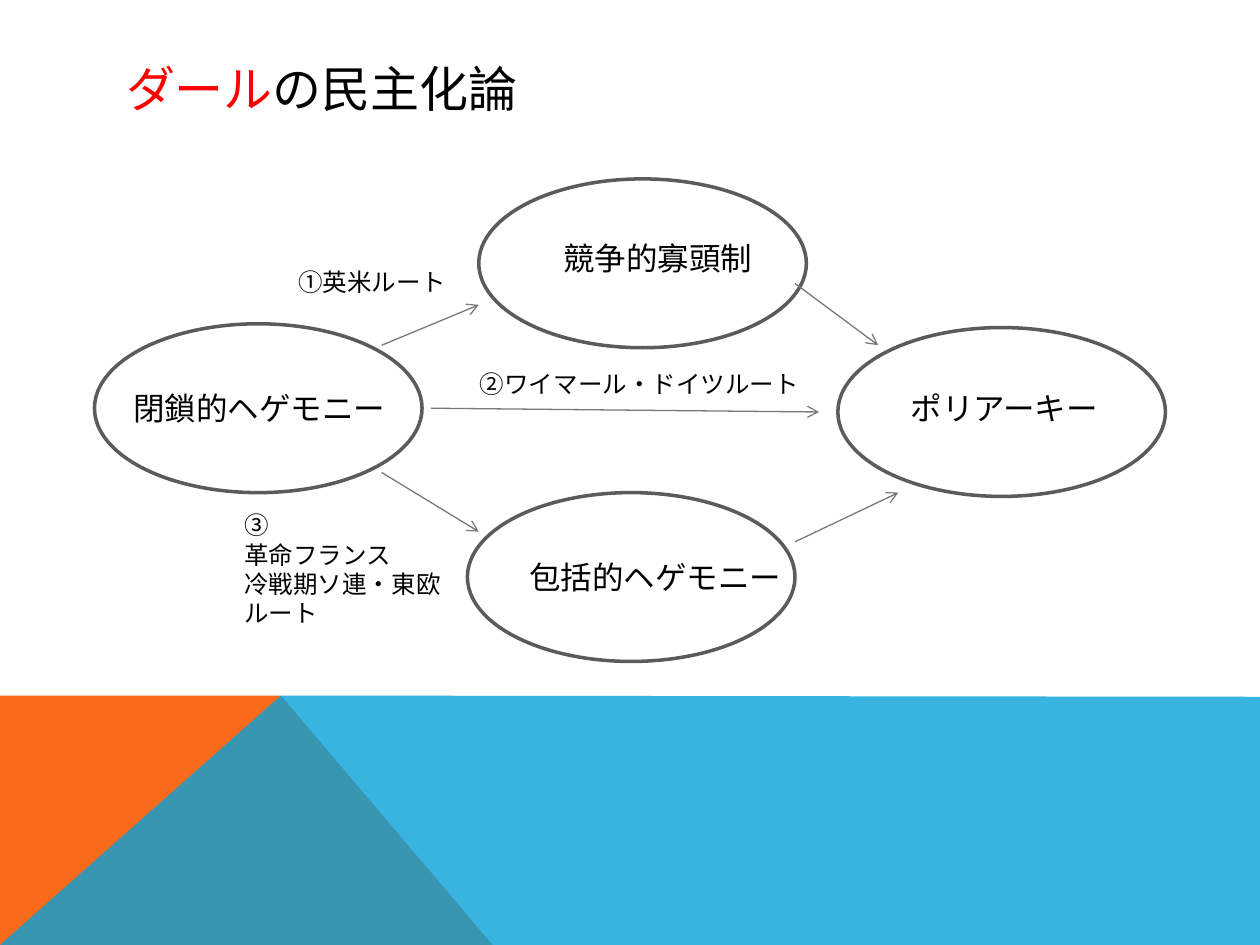
from lxml import etree
from pptx import Presentation
from pptx.dml.color import RGBColor
from pptx.enum.shapes import MSO_CONNECTOR, MSO_SHAPE
from pptx.enum.text import MSO_ANCHOR, PP_ALIGN
from pptx.oxml.ns import qn
from pptx.util import Inches, Pt

ELLIPSE = MSO_SHAPE.OVAL
STRAIGHT = MSO_CONNECTOR.STRAIGHT
LEFT = PP_ALIGN.LEFT
MIDDLE = MSO_ANCHOR.MIDDLE

FONT = "Noto Sans CJK JP"
BLACK = RGBColor(0x00, 0x00, 0x00)
RED = RGBColor(0xFF, 0x00, 0x00)
ORANGE = RGBColor(0xF9, 0x6A, 0x1B)
BLUE = RGBColor(0x08, 0xA1, 0xD9)
OUTLINE = RGBColor(0x5A, 0x5B, 0x5D)
ARROW = RGBColor(0x76, 0x78, 0x7B)


def add_run(p, text, size, color):
    r = p.add_run()
    r.text = text
    for name, value in {"name": FONT, "size": Pt(size), "bold": False}.items():
        setattr(r.font, name, value)
    r.font.color.rgb = color
    etree.SubElement(r.font._element, qn("a:ea"), typeface=FONT)


prs = Presentation()
prs.slide_width, prs.slide_height = Inches(10), Inches(7.5)
s = prs.slides.add_slide(prs.slide_layouts[5])

# Coloured footer: orange wedge under a translucent blue band
footer = [
    (ORANGE, None, [(0, 7.5), (0, 5.52), (2.23, 5.52), (3.91, 7.5)]),
    (BLUE, 80, [(0, 7.5), (2.23, 5.52), (10, 5.53), (10, 7.5)]),
]
for color, opacity, points in footer:
    corners = [(Inches(x), Inches(y)) for x, y in points]
    builder = s.shapes.build_freeform(*corners[0])
    builder.add_line_segments(corners[1:], close=True)
    sp = builder.convert_to_shape()
    sp.shadow.inherit = False
    sp.fill.solid()
    sp.fill.fore_color.rgb = color
    sp.line.fill.background()
    if opacity:
        srgb = sp.fill._xPr.find(".//" + qn("a:srgbClr"))
        etree.SubElement(srgb, qn("a:alpha"), val=str(opacity * 1000))

# Title
title = s.shapes.title
title.left, title.top = Inches(0.9), Inches(0.4)
title.width, title.height = Inches(8.22), Inches(0.6)
title.text_frame.vertical_anchor = MIDDLE
p = title.text_frame.paragraphs[0]
p.alignment = LEFT
add_run(p, "ダール", 28, RED)
add_run(p, "の民主化論", 28, BLACK)

# Regime ellipses
for x, y in [(0.75, 2.57), (3.8, 1.42), (3.71, 3.91), (6.65, 2.6)]:
    sp = s.shapes.add_shape(ELLIPSE, Inches(x), Inches(y), Inches(2.6), Inches(1.34))
    sp.shadow.inherit = False
    sp.fill.background()
    sp.line.color.rgb = OUTLINE
    sp.line.width = Pt(2)

# Route arrows
routes = [
    (3.03, 2.74, 3.8, 2.42),
    (3.42, 3.24, 6.5, 3.27),
    (6.31, 2.25, 6.97, 2.74),
    (3.03, 3.75, 3.8, 4.22),
    (6.31, 4.3, 7.13, 3.91),
]
for route in routes:
    line = s.shapes.add_connector(STRAIGHT, *[Inches(v) for v in route])
    line.line.color.rgb = ARROW
    line.line.width = Pt(0.75)
    etree.SubElement(line.line._get_or_add_ln(), qn("a:tailEnd"), type="arrow")
    etree.SubElement(line._element.spPr, qn("a:effectLst"))

# Regime names (18 pt) and route names (14 pt)
labels = [
    (0.96, 3.04, 2.83, 0.4, 18, ["閉鎖的ヘゲモニー"]),
    (4.37, 1.85, 3.78, 0.4, 18, ["競争的寡頭制"]),
    (4.1, 4.38, 4.32, 0.4, 18, ["包括的ヘゲモニー"]),
    (7.13, 3.04, 2.76, 0.4, 18, ["ポリアーキー"]),
    (2.27, 2.07, 1.53, 0.34, 14, ["①英米ルート"]),
    (3.71, 2.88, 3.41, 0.34, 14, ["②ワイマール・ドイツルート"]),
    (1.84, 4, 2.44, 1.04, 14, ["③", "革命フランス", "冷戦期ソ連・東欧", "ルート"]),
]
for x, y, w, h, size, lines in labels:
    tf = s.shapes.add_textbox(Inches(x), Inches(y), Inches(w), Inches(h)).text_frame
    tf.word_wrap = True
    for i, text in enumerate(lines):
        p = tf.add_paragraph() if i else tf.paragraphs[0]
        p.line_spacing = Pt(size * 1.2)
        add_run(p, text, size, BLACK)

prs.save("out.pptx")
